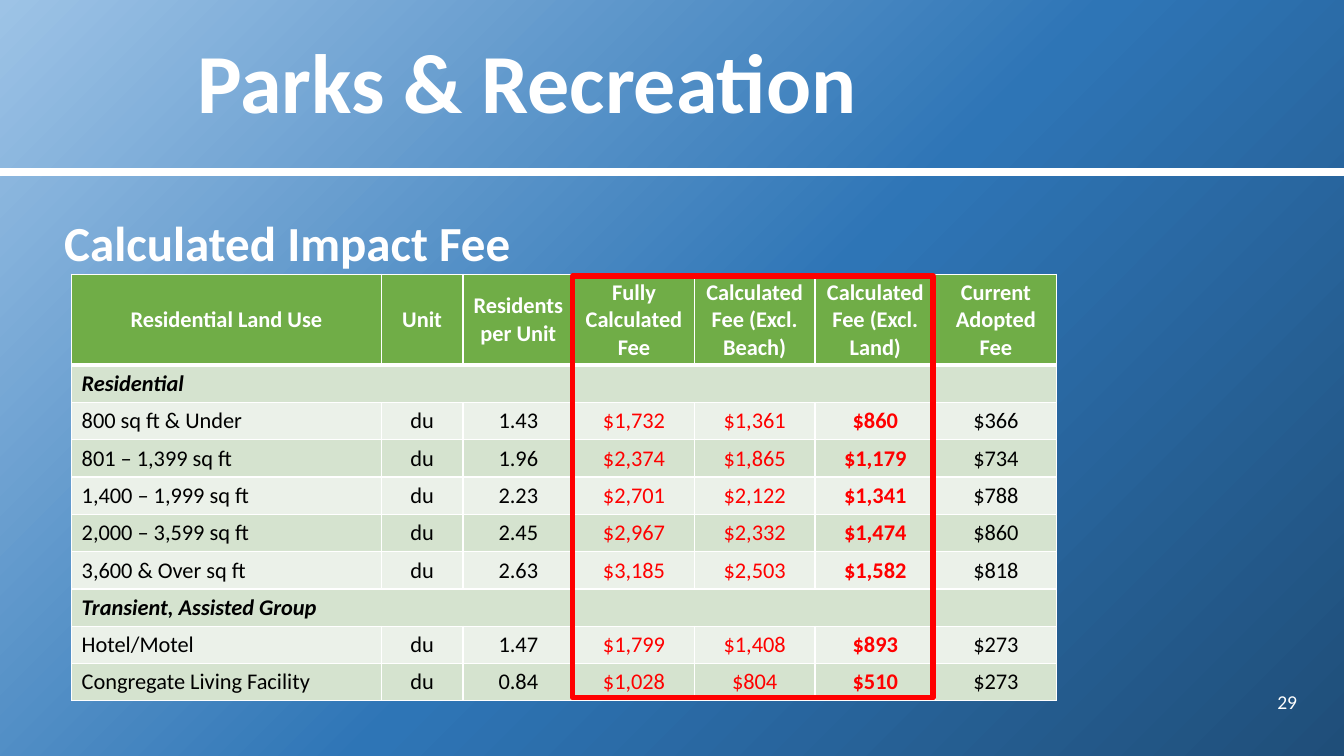
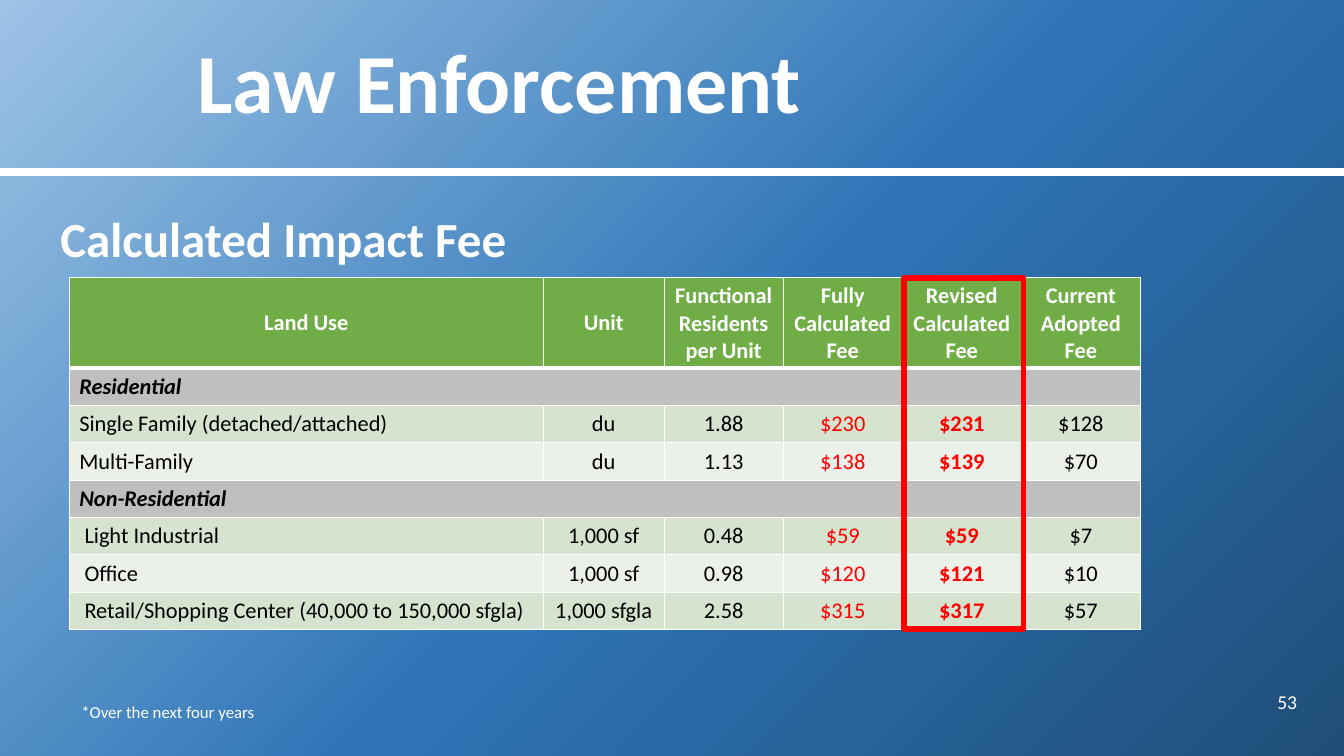
from dataclasses import dataclass

from pptx import Presentation, util as u
from pptx.dml.color import RGBColor
from pptx.enum import shapes, text
from pptx.oxml import parse_xml
from pptx.oxml.ns import nsdecls, qn

# Shared look
FONT = "Calibri"
WHITE, BLACK, RED = "FFFFFF", "000000", "FF0000"
GREEN, GREY, BAND, PALE_BAND = "70AD47", "BFBFBF", "D5E3CF", "EBF1E9"
BACKDROP = ((0, "9DC3E6"), (53, "2E75B6"), (100, "1F4E79"))
HEADER_HEIGHT, ROW_HEIGHT = 2.29, 0.94
CELL_MARGIN = 0.25
FIRST_FEE_COLUMN = 3


@dataclass(frozen=True)
class Box:
    left: float
    top: float
    width: float
    height: float

    def lengths(self) -> list:
        return [u.Cm(n) for n in (self.left, self.top, self.width, self.height)]


@dataclass(frozen=True)
class Style:
    size: float
    color: str = WHITE
    bold: bool = False
    italic: bool = False
    align: text.PP_ALIGN = text.PP_ALIGN.LEFT
    spacing: float = 1.0


@dataclass(frozen=True)
class Group:
    name: str
    rows: tuple
    indent: float = 0


@dataclass(frozen=True)
class FeeSlide:
    title: str
    number: str
    subtitle: Box
    table: tuple  # left, top
    widths: tuple
    headings: tuple
    groups: tuple
    group_fill: str
    bands: tuple
    highlight: Box
    footnote: str = ""


TITLE_BOX = Box(4.72, 0, 28.2, 4.34)
NUMBER_BOX = Box(30.68, 17.17, 2.26, 1.02)
FOOTNOTE_BOX = Box(1.8, 17.55, 27.89, 0.76)
CENTER = text.PP_ALIGN.CENTER
TITLE = Style(60, bold=True, spacing=0.9)
SUBTITLE = Style(35, bold=True, spacing=1.2)
NUMBER = Style(14, align=text.PP_ALIGN.RIGHT)
FOOTNOTE = Style(12)
HEADING = Style(16, bold=True, align=CENTER)
GROUP_NAME = Style(16, BLACK, bold=True, italic=True)
LAND_USE = Style(16, BLACK)
VALUE = Style(16, BLACK, align=CENTER)
FEE = Style(16, RED, align=CENTER)
KEY_FEE = Style(16, RED, bold=True, align=CENTER)

SLIDES = (
    FeeSlide(
        "Parks & Recreation", "29", Box(1.37, 4.93, 31.55, 2), (1.81, 6.91),
        (7.8, 2.06, 2.79, 3.04, 3.04, 3.04, 3.04),
        ("Residential Land Use", "Unit", "Residents per Unit", "Fully Calculated Fee",
         "Calculated Fee (Excl. Beach)", "Calculated Fee (Excl. Land)", "Current Adopted Fee"),
        (
            Group("Residential", (
                ("800 sq ft & Under", "du", "1.43", "$1,732", "$1,361", "$860", "$366"),
                ("801 – 1,399 sq ft", "du", "1.96", "$2,374", "$1,865", "$1,179", "$734"),
                ("1,400 – 1,999 sq ft", "du", "2.23", "$2,701", "$2,122", "$1,341", "$788"),
                ("2,000 – 3,599 sq ft", "du", "2.45", "$2,967", "$2,332", "$1,474", "$860"),
                ("3,600 & Over sq ft", "du", "2.63", "$3,185", "$2,503", "$1,582", "$818"),
            )),
            Group("Transient, Assisted Group", (
                ("Hotel/Motel", "du", "1.47", "$1,799", "$1,408", "$893", "$273"),
                ("Congregate Living Facility", "du", "0.84", "$1,028", "$804", "$510", "$273"),
            )),
        ),
        BAND, (PALE_BAND, BAND), Box(14.43, 6.96, 9.09, 10.62),
    ),
    FeeSlide(
        "Law Enforcement", "53", Box(1.27, 4.83, 31.55, 2), (1.75, 6.99),
        (11.94, 3.05, 3, 3, 3, 3),
        ("Land Use", "Unit", "Functional Residents per Unit", "Fully Calculated Fee",
         "Revised Calculated Fee", "Current Adopted Fee"),
        (
            Group("Residential", (
                ("Single Family (detached/attached)", "du", "1.88", "$230", "$231", "$128"),
                ("Multi-Family", "du", "1.13", "$138", "$139", "$70"),
            )),
            Group("Non-Residential", (
                ("Light Industrial", "1,000 sf", "0.48", "$59", "$59", "$7"),
                ("Office", "1,000 sf", "0.98", "$120", "$121", "$10"),
                ("Retail/Shopping Center (40,000 to 150,000 sfgla)", "1,000 sfgla",
                 "2.58", "$315", "$317", "$57"),
            ), indent=0.13),
        ),
        GREY, (BAND, PALE_BAND), Box(22.78, 7.01, 3.02, 8.84),
        "*Over the next four years",
    ),
)


def rgb(color: str) -> RGBColor:
    return RGBColor.from_string(color)


def write(frame, words: str, style: Style) -> None:
    paragraph = frame.paragraphs[0]
    paragraph.add_run().text = words
    paragraph.alignment = style.align
    paragraph.line_spacing = style.spacing
    font = paragraph.font
    font.name, font.size = FONT, u.Pt(style.size)
    font.bold, font.italic = style.bold, style.italic
    font.color.rgb = rgb(style.color)


def add_text(slide, box: Box, words: str, style: Style, anchor=text.MSO_ANCHOR.TOP):
    frame = slide.shapes.add_textbox(*box.lengths()).text_frame
    frame.word_wrap = True
    frame.vertical_anchor = anchor
    write(frame, words, style)
    return frame


def set_backdrop(master) -> None:
    master.background.fill.solid()
    stops = "".join(f'<a:gs pos="{place * 1000}"><a:srgbClr val="{color}"/></a:gs>'
                    for place, color in BACKDROP)
    gradient = parse_xml(
        f'<a:gradFill {nsdecls("a")} rotWithShape="1"><a:gsLst>{stops}</a:gsLst>'
        '<a:path path="circle"><a:fillToRect r="100000" b="100000"/></a:path></a:gradFill>')
    solid = next(master.element.iter(qn("a:solidFill")))
    solid.getparent().replace(solid, gradient)


def add_title(slide, words: str) -> None:
    frame = add_text(slide, TITLE_BOX, words, TITLE, text.MSO_ANCHOR.MIDDLE)
    properties = frame.paragraphs[0].runs[0]._r.get_or_add_rPr()
    properties.append(parse_xml(
        f'<a:effectLst {nsdecls("a")}><a:outerShdw blurRad="38100" dist="38100" dir="2700000">'
        '<a:srgbClr val="000000"><a:alpha val="43000"/></a:srgbClr></a:outerShdw></a:effectLst>'))


def add_rule(slide) -> None:
    rule = slide.shapes.add_connector(
        shapes.MSO_CONNECTOR.STRAIGHT, 0, u.Cm(4.34), u.Cm(33.87), u.Cm(4.34))
    rule.line.color.rgb = rgb(WHITE)
    rule.line.width = u.Pt(6)
    rule._element.spPr.append(parse_xml(f'<a:effectLst {nsdecls("a")}/>'))


def set_borders(cell, top: float = 1, bottom: float = 1) -> None:
    properties = cell._tc.get_or_add_tcPr()
    for place, (side, points) in enumerate(
            (("L", 1), ("R", 1), ("T", top), ("B", bottom))):
        properties.insert(place, parse_xml(
            f'<a:ln{side} {nsdecls("a")} w="{u.Pt(points)}"><a:solidFill>'
            f'<a:srgbClr val="{WHITE}"/></a:solidFill></a:ln{side}>'))


def fill_cell(cell, words: str, style: Style, fill: str, indent: float = 0) -> None:
    cell.fill.solid()
    cell.fill.fore_color.rgb = rgb(fill)
    cell.vertical_anchor = text.MSO_ANCHOR.MIDDLE
    cell.margin_left = u.Cm(CELL_MARGIN + indent)
    if words:
        write(cell.text_frame, words, style)


def value_style(column: int, columns: int) -> Style:
    """Fees between the unit figures and the adopted fee are red, the last one bold."""
    if column == 0:
        return LAND_USE
    if column == columns - 2:
        return KEY_FEE
    return FEE if FIRST_FEE_COLUMN <= column < columns - 2 else VALUE


def add_fee_table(slide, content: FeeSlide) -> None:
    columns = len(content.widths)
    body_rows = sum(1 + len(group.rows) for group in content.groups)
    box = Box(*content.table, sum(content.widths), HEADER_HEIGHT + body_rows * ROW_HEIGHT)
    table = slide.shapes.add_table(body_rows + 1, columns, *box.lengths()).table
    table.horz_banding = False
    for column, width in zip(table.columns, content.widths):
        column.width = u.Cm(width)
    for index, row in enumerate(table.rows):
        row.height = u.Cm(ROW_HEIGHT if index else HEADER_HEIGHT)
        for cell in row.cells:
            set_borders(cell, top=3 if index == 1 else 1, bottom=1 if index else 3)

    # Header, then each group name with its rows
    for column, heading in enumerate(content.headings):
        fill_cell(table.cell(0, column), heading, HEADING, GREEN)
    row = 1
    for group in content.groups:
        for column in range(columns):
            fill_cell(table.cell(row, column), "" if column else group.name,
                      GROUP_NAME, content.group_fill)
        table.cell(row, 0).merge(table.cell(row, columns - 1))
        for index, values in enumerate(group.rows):
            row += 1
            for column, value in enumerate(values):
                fill_cell(table.cell(row, column), value, value_style(column, columns),
                          content.bands[index % 2], 0 if column else group.indent)
        row += 1


def add_highlight(slide, box: Box) -> None:
    frame = slide.shapes.add_shape(shapes.MSO_SHAPE.RECTANGLE, *box.lengths())
    frame.shadow.inherit = False
    frame.fill.background()
    frame.line.color.rgb = rgb(RED)
    frame.line.width = u.Pt(4)


def build_slide(presentation, content: FeeSlide) -> None:
    slide = presentation.slides.add_slide(presentation.slide_layouts[6])
    add_rule(slide)
    add_text(slide, NUMBER_BOX, content.number, NUMBER, text.MSO_ANCHOR.MIDDLE)
    add_text(slide, content.subtitle, "Calculated Impact Fee", SUBTITLE)
    add_fee_table(slide, content)
    add_highlight(slide, content.highlight)
    if content.footnote:
        add_text(slide, FOOTNOTE_BOX, content.footnote, FOOTNOTE)
    add_title(slide, content.title)


def main() -> None:
    presentation = Presentation()
    presentation.slide_width, presentation.slide_height = u.Cm(33.87), u.Cm(19.05)
    set_backdrop(presentation.slide_master)
    for content in SLIDES:
        build_slide(presentation, content)
    presentation.save("out.pptx")


if __name__ == "__main__":
    main()
